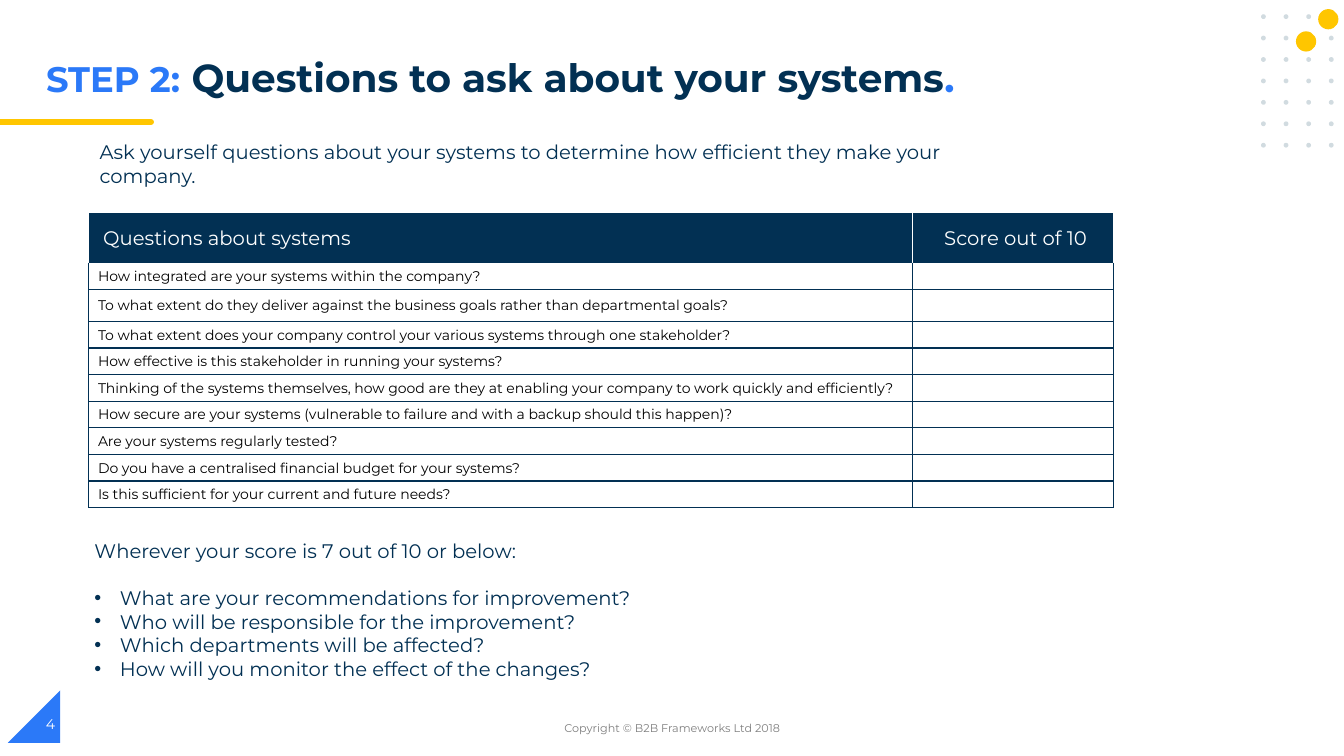
"""Build the slide that scores a company's systems."""
import dataclasses

import lxml.etree
import pptx
import pptx.dml.color
import pptx.enum.shapes
import pptx.enum.text
import pptx.oxml.ns
import pptx.shapes.autoshape
import pptx.slide
import pptx.table
import pptx.text.text
import pptx.util

Cm = pptx.util.Cm
Pt = pptx.util.Pt
RGBColor = pptx.dml.color.RGBColor
Shapes = pptx.enum.shapes.MSO_SHAPE
Align = pptx.enum.text.PP_ALIGN
Anchor = pptx.enum.text.MSO_ANCHOR
qn = pptx.oxml.ns.qn

FONT = "Montserrat"
NAVY = RGBColor(0x02, 0x30, 0x53)
BLUE = RGBColor(0x2B, 0x79, 0xF8)
YELLOW = RGBColor(0xFF, 0xC6, 0x00)
PALE = RGBColor(0xD1, 0xDB, 0xE0)
GREY = RGBColor(0x7F, 0x7F, 0x7F)
WHITE = RGBColor(0xFF, 0xFF, 0xFF)
BLACK = RGBColor(0x00, 0x00, 0x00)


@dataclasses.dataclass(frozen=True)
class Area:
    left: float
    top: float
    width: float
    height: float

    def lengths(self) -> tuple:
        return Cm(self.left), Cm(self.top), Cm(self.width), Cm(self.height)


@dataclasses.dataclass(frozen=True)
class Ornament:
    kind: Shapes
    area: Area
    color: RGBColor
    mirrored: bool = False


@dataclasses.dataclass(frozen=True)
class TextStyle:
    size: float
    color: RGBColor
    bold: bool = False


@dataclasses.dataclass(frozen=True)
class Label:
    text: str
    area: Area
    style: TextStyle
    align: Align = Align.LEFT
    anchor: Anchor = Anchor.TOP


READING = TextStyle(14, NAVY)
HEADING = TextStyle(14, WHITE)
QUESTION = TextStyle(10, BLACK)

TITLE_AREA = Area(0.91, 1.32, 25.58, 1.52)
TITLE_RUNS = [
    ("STEP 2:", TextStyle(25.3, BLUE, True)),
    (" ", TextStyle(28.8, NAVY, True)),
    ("Questions to ask about your systems", TextStyle(27.9, NAVY, True)),
    (".", TextStyle(27.9, BLUE, True)),
]

DOT_GRID = [
    Ornament(Shapes.OVAL, Area(31.78 + 0.57 * column, 0.36 + 0.54 * row, 0.12, 0.12), PALE)
    for row in range(7)
    for column in range(4)
]
ORNAMENTS = [
    Ornament(Shapes.RIGHT_TRIANGLE, Area(0.2, 17.4, 1.32, 1.32), BLUE, mirrored=True),
    Ornament(Shapes.FLOWCHART_TERMINATOR, Area(3.4, 3, 0.48, 0.15), YELLOW),
    Ornament(Shapes.RECTANGLE, Area(0, 3, 3.58, 0.15), YELLOW),
    *DOT_GRID,
    Ornament(Shapes.OVAL, Area(33.22, 0.23, 0.51, 0.51), YELLOW),
    Ornament(Shapes.OVAL, Area(32.66, 0.79, 0.51, 0.51), YELLOW),
]

LABELS = [
    Label("Ask yourself questions about your systems to determine how efficient they make your company.",
          Area(2.26, 3.4, 22.4, 2.64), READING),
    Label("Copyright © B2B Frameworks Ltd 2018", Area(11.23, 17.83, 11.43, 1.02),
          TextStyle(8, GREY), Align.CENTER, Anchor.MIDDLE),
    Label("4", Area(0.91, 17.73, 7.62, 1.02), TextStyle(10, WHITE), anchor=Anchor.MIDDLE),
]

HEADERS = ["Questions about systems", "Score out of 10"]
QUESTIONS = [
    "How integrated are your systems within the company?",
    "To what extent do they deliver against the business goals rather than departmental goals?",
    "To what extent does your company control your various systems through one stakeholder?",
    "How effective is this stakeholder in running your systems?",
    "Thinking of the systems themselves, how good are they at enabling your company to work quickly and efficiently?",
    "How secure are your systems (vulnerable to failure and with a backup should this happen)?",
    "Are your systems regularly tested?",
    "Do you have a centralised financial budget for your systems?",
    "Is this sufficient for your current and future needs?",
]
COLUMN_WIDTHS = [20.75, 5.08]
ROW_HEIGHTS = [1.27, 0.67, 0.8] + [0.67] * 7
TABLE_AREA = Area(2.24, 5.36, sum(COLUMN_WIDTHS), sum(ROW_HEIGHTS))

FOLLOW_UP_AREA = Area(2.13, 13.44, 24.26, 3.86)
FOLLOW_UP_LEAD = "Wherever your score is 7 out of 10 or below:"
FOLLOW_UPS = [
    "What are your recommendations for improvement?",
    "Who will be responsible for the improvement?",
    "Which departments will be affected?",
    "How will you monitor the effect of the changes?",
]


def format_runs(paragraph: pptx.text.text._Paragraph, style: TextStyle) -> None:
    for run in paragraph.runs:
        run.font.name = FONT
        run.font.size = Pt(style.size)
        run.font.bold = style.bold
        run.font.color.rgb = style.color


def prepare_frame(shape: pptx.shapes.autoshape.Shape, area: Area,
                  anchor: Anchor = Anchor.TOP) -> pptx.text.text.TextFrame:
    shape.left, shape.top, shape.width, shape.height = area.lengths()
    frame = shape.text_frame
    frame.word_wrap = True
    frame.auto_size = pptx.enum.text.MSO_AUTO_SIZE.NONE
    frame.vertical_anchor = anchor
    frame.margin_left = frame.margin_right = Cm(0.25)
    frame.margin_top = frame.margin_bottom = Cm(0.13)
    return frame


def draw_ornament(slide: pptx.slide.Slide, ornament: Ornament) -> None:
    shape = slide.shapes.add_shape(ornament.kind, *ornament.area.lengths())
    shape.shadow.inherit = False
    shape.fill.solid()
    shape.fill.fore_color.rgb = ornament.color
    shape.line.fill.background()
    if ornament.mirrored:
        shape.element.spPr.xfrm.set("flipH", "1")


def draw_label(slide: pptx.slide.Slide, label: Label) -> None:
    shape = slide.shapes.add_textbox(*label.area.lengths())
    frame = prepare_frame(shape, label.area, label.anchor)
    frame.text = label.text
    frame.paragraphs[0].alignment = label.align
    format_runs(frame.paragraphs[0], label.style)


def fill_title(slide: pptx.slide.Slide) -> None:
    paragraph = prepare_frame(slide.shapes.title, TITLE_AREA).paragraphs[0]
    paragraph.alignment = Align.LEFT
    paragraph.line_spacing = 0.9
    for text, style in TITLE_RUNS:
        run = paragraph.add_run()
        run.text = text
        run.font.name = FONT
        run.font.size = Pt(style.size)
        run.font.bold = style.bold
        run.font.color.rgb = style.color


def set_bullet(paragraph: pptx.text.text._Paragraph, bulleted: bool) -> None:
    properties = paragraph._p.get_or_add_pPr()
    properties.set("marL", str(Cm(0.64) if bulleted else 0))
    properties.set("indent", str(-Cm(0.64) if bulleted else 0))
    if bulleted:
        color = lxml.etree.SubElement(properties, qn("a:buClr"))
        lxml.etree.SubElement(color, qn("a:srgbClr"), val=str(NAVY))
        lxml.etree.SubElement(properties, qn("a:buFont"), typeface="Arial")
        lxml.etree.SubElement(properties, qn("a:buChar"), char="•")
    else:
        lxml.etree.SubElement(properties, qn("a:buNone"))


def fill_follow_ups(slide: pptx.slide.Slide) -> None:
    frame = prepare_frame(slide.placeholders[1], FOLLOW_UP_AREA)
    frame.text = "\n".join([FOLLOW_UP_LEAD, *FOLLOW_UPS])
    for index, paragraph in enumerate(frame.paragraphs):
        set_bullet(paragraph, bulleted=index > 0)
        paragraph.space_before = Pt(17 if index == 1 else 0)
        format_runs(paragraph, READING)


def set_borders(cell: pptx.table._Cell, color: RGBColor, top_color: RGBColor) -> None:
    properties = cell._tc.get_or_add_tcPr()
    for side in "LRTB":
        line = lxml.etree.SubElement(properties, qn(f"a:ln{side}"), w=str(Pt(1)))
        fill = lxml.etree.SubElement(line, qn("a:solidFill"))
        lxml.etree.SubElement(fill, qn("a:srgbClr"), val=str(top_color if side == "T" else color))


def fill_cell(cell: pptx.table._Cell, text: str, row: int, column: int) -> None:
    is_header = row == 0
    set_borders(cell, WHITE if is_header else NAVY, WHITE if row < 2 else NAVY)
    if is_header:
        cell.fill.solid()
        cell.fill.fore_color.rgb = NAVY
    else:
        cell.fill.background()
    cell.vertical_anchor = Anchor.MIDDLE
    cell.margin_left = Cm((0.36, 0.15)[column] if is_header else 0.23)
    cell.margin_right = cell.margin_top = Cm(0.02)
    cell.margin_bottom = 0
    paragraph = cell.text_frame.paragraphs[0]
    if text:
        paragraph.text = text
        paragraph.alignment = Align.CENTER if column else Align.LEFT
        format_runs(paragraph, HEADING if is_header else QUESTION)
    else:
        lxml.etree.SubElement(paragraph._p, qn("a:endParaRPr"), sz="1000")


def draw_table(slide: pptx.slide.Slide) -> None:
    rows = [HEADERS] + [[question, ""] for question in QUESTIONS]
    table = slide.shapes.add_table(len(rows), len(HEADERS), *TABLE_AREA.lengths()).table
    table.horz_banding = False
    for column, width in zip(table.columns, COLUMN_WIDTHS):
        column.width = Cm(width)
    for row, height in zip(table.rows, ROW_HEIGHTS):
        row.height = Cm(height)
    for row, texts in enumerate(rows):
        for column, text in enumerate(texts):
            fill_cell(table.cell(row, column), text, row, column)


def main() -> None:
    presentation = pptx.Presentation()
    presentation.slide_width, presentation.slide_height = Cm(33.87), Cm(19.05)
    slide = presentation.slides.add_slide(presentation.slide_layouts[1])
    for ornament in ORNAMENTS:
        draw_ornament(slide, ornament)
    fill_title(slide)
    draw_table(slide)
    fill_follow_ups(slide)
    for label in LABELS:
        draw_label(slide, label)
    presentation.save("out.pptx")


if __name__ == "__main__":
    main()
